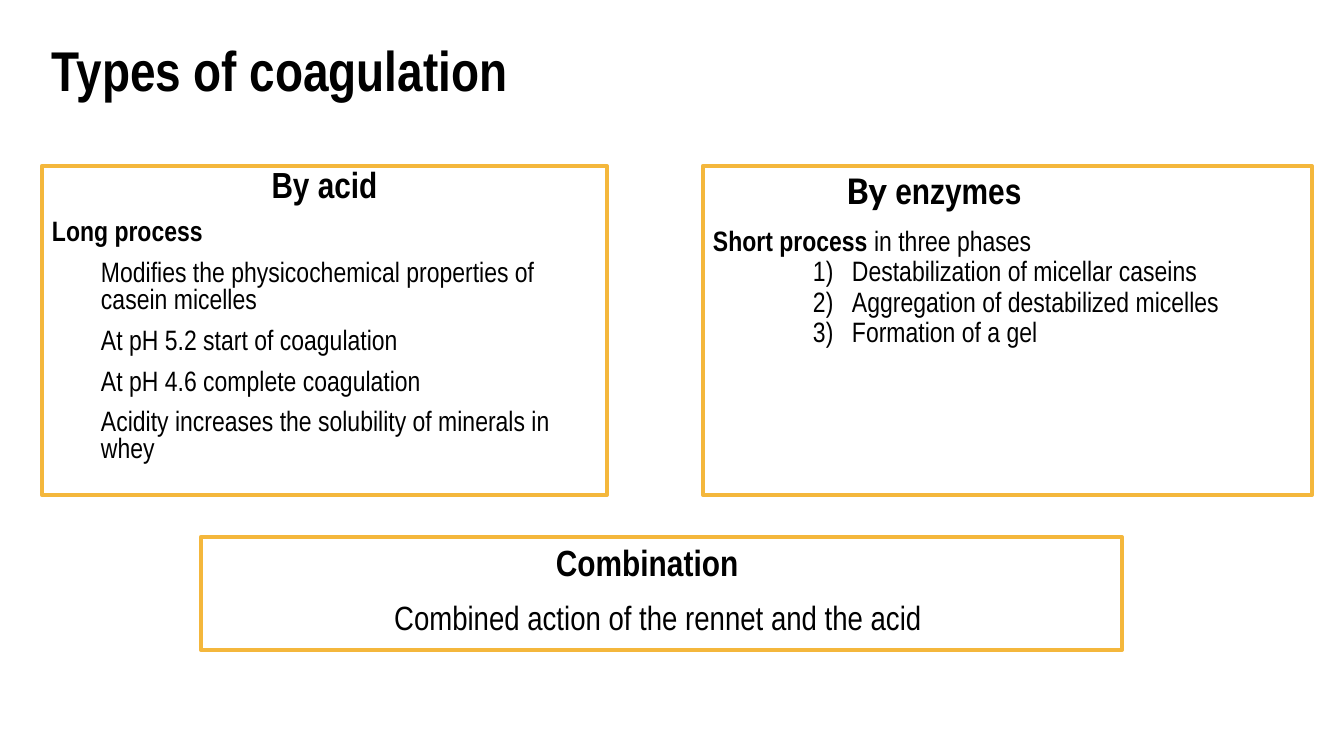
from pptx import Presentation
from pptx.dml.color import RGBColor
from pptx.enum.shapes import MSO_SHAPE
from pptx.enum.text import MSO_ANCHOR, MSO_AUTO_SIZE, PP_ALIGN
from pptx.oxml.ns import qn
from pptx.util import Pt

LEFT, CENTER = PP_ALIGN.LEFT, PP_ALIGN.CENTER
TOP, MIDDLE = MSO_ANCHOR.TOP, MSO_ANCHOR.MIDDLE
RECT, NO_FIT = MSO_SHAPE.RECTANGLE, MSO_AUTO_SIZE.NONE
SCALE = 12192000 / 1344


def px(n):
    return round(n * SCALE)


def color(value):
    return RGBColor.from_string(value)


def run(text, size=20, bold=False, font="Arial Narrow"):
    return dict(text=text, size=size, bold=bold, font=font)


def para(*runs, align=LEFT, before=0, margin=0, indent=0, numbered=False):
    return dict(runs=runs, align=align, before=before, margin=margin,
                indent=indent, numbered=numbered)


class Deck:
    """Hold the style and the current slide, and place its elements."""

    ink = "000000"
    accent = "F4B73C"

    def __init__(self):
        self.prs = Presentation()
        self.prs.slide_width, self.prs.slide_height = px(1344), px(756)
        self.s = self.prs.slides.add_slide(self.prs.slide_layouts[3])

    def title(self, text, box):
        sp = self.s.shapes.title
        self.place(sp, box)
        self.fill_text(sp, [para(run(text, 40, True))], anchor=MIDDLE)

    def list_panel(self, idx, box, paras, **fmt):
        sp = self.s.placeholders[idx]
        self.place(sp, box)
        self.frame(sp)
        self.fill_text(sp, paras, **fmt)

    def panel(self, box, paras, **fmt):
        sp = self.s.shapes.add_shape(RECT, *map(px, box))
        sp.shadow.inherit = False
        self.frame(sp)
        self.fill_text(sp, paras, **fmt)

    def place(self, sp, box):
        sp.left, sp.top, sp.width, sp.height = map(px, box)

    def frame(self, sp):
        sp.fill.background()
        sp.line.color.rgb = color(self.accent)
        sp.line.width = Pt(3)

    def fill_text(self, sp, paras, spacing=0.9, anchor=TOP, inset=5):
        tf = sp.text_frame
        tf.word_wrap, tf.auto_size, tf.vertical_anchor = True, NO_FIT, anchor
        tf.margin_left = tf.margin_right = px(10)
        tf.margin_top, tf.margin_bottom = px(inset), px(5)
        for i, item in enumerate(paras):
            p = tf.add_paragraph() if i else tf.paragraphs[0]
            self.bullet(p, item)
            p.alignment, p.line_spacing = item["align"], spacing
            p.space_before, p.space_after = Pt(item["before"]), Pt(0)
            for part in item["runs"]:
                r = p.add_run()
                r.text = part["text"]
                r.font.name, r.font.bold = part["font"], part["bold"]
                r.font.size = Pt(part["size"])
                r.font.color.rgb = color(self.ink)

    def bullet(self, p, item):
        pPr = p._p.get_or_add_pPr()
        pPr.set("marL", str(px(item["margin"])))
        pPr.set("indent", str(px(item["indent"])))
        tag = "a:buAutoNum" if item["numbered"] else "a:buNone"
        bu = pPr.makeelement(qn(tag), {})
        if item["numbered"]:
            bu.set("type", "arabicParenR")
        pPr.append(bu)


def main():
    deck = Deck()
    deck.title("Types of coagulation", (42, 23, 1159, 101))

    effects = ["Modifies the physicochemical properties of casein micelles",
               "At pH 5.2 start of coagulation",
               "At pH 4.6 complete coagulation",
               "Acidity increases the solubility of minerals in whey"]
    deck.list_panel(1, (42, 166, 565, 329), [
        para(run("By acid", 25.9, True), align=CENTER),
        para(run("Long process", bold=True), before=10),
        *[para(run(text), before=10, margin=49) for text in effects],
    ], spacing=0.8)

    phases = ["Destabilization of micellar caseins",
              "Aggregation of destabilized micelles",
              "Formation of a gel"]
    deck.list_panel(2, (703, 166, 609, 329), [
        para(run("By", 28, True, "Calibri"), run(" enzymes", 26, True), margin=134),
        para(run("Short process", bold=True), run(" in three phases"), before=10),
        *[para(run(text), margin=139, indent=-39, numbered=True) for text in phases],
    ])

    deck.panel((201, 537, 921, 113), [
        para(run("Combination", 26, True), margin=345),
        para(run("Combined action of the rennet and the acid ", 24),
             align=CENTER, before=12),
    ], inset=8)
    deck.prs.save("out.pptx")


if __name__ == "__main__":
    main()
